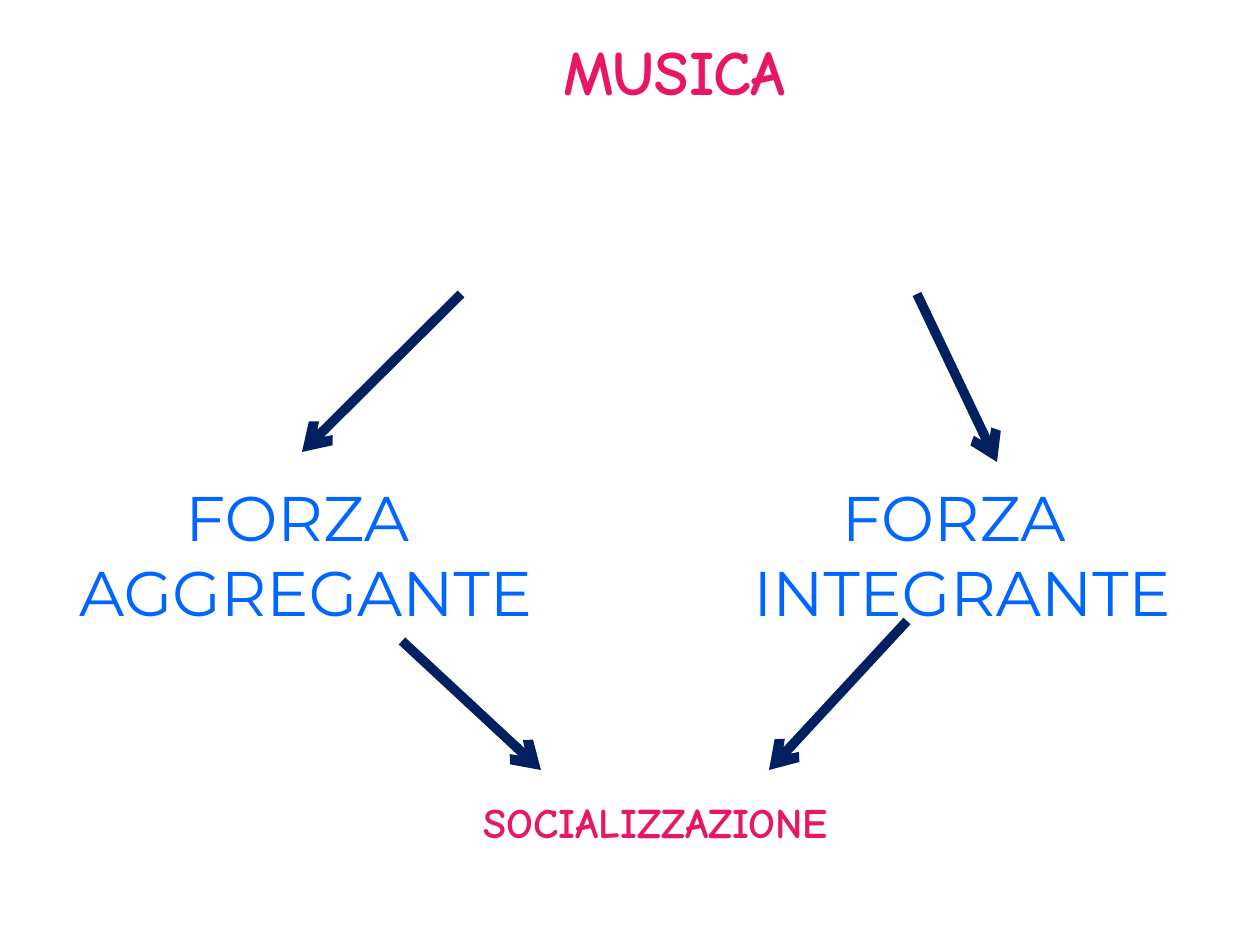
from dataclasses import dataclass

from lxml.etree import SubElement as Sub
from pptx import Presentation as Deck
from pptx.dml.color import RGBColor as Rgb
from pptx.enum.shapes import MSO_CONNECTOR as Conn
from pptx.enum.text import MSO_ANCHOR as Anchor, PP_ALIGN as Align
from pptx.oxml.ns import qn
from pptx.slide import Slide
from pptx.util import Emu, Pt

SCALE = 914400 / 126


def px(n: int) -> Emu:
    return Emu(round(n * SCALE))


@dataclass(frozen=True)
class Style:
    font: str
    size: int
    color: str
    bold: bool


@dataclass(frozen=True)
class Theme:
    title: Style = Style("Comic Neue", 36, "E81766", True)
    force: Style = Style("Montserrat", 36, "0066FF", False)
    end: Style = Style("Comic Neue", 24, "E81766", True)
    line: str = "002060"
    width: float = 5.5


@dataclass(frozen=True)
class Label:
    text: str
    left: int
    top: int
    width: int
    height: int
    style: Style


@dataclass(frozen=True)
class Arrow:
    x1: int
    y1: int
    x2: int
    y2: int


THEME = Theme()
LABELS = [
    Label("MUSICA", 134, 26, 1081, 238, THEME.title),
    Label("FORZA \nAGGREGANTE", 25, 472, 561, 129, THEME.force),
    Label("FORZA \nINTEGRANTE", 689, 472, 546, 139, THEME.force),
    Label("SOCIALIZZAZIONE", 115, 790, 1081, 110, THEME.end),
]
ARROWS = [
    Arrow(461, 294, 302, 452),
    Arrow(917, 294, 997, 462),
    Arrow(402, 641, 541, 770),
    Arrow(907, 621, 769, 770),
]


def write(slide: Slide, label: Label) -> None:
    box = slide.shapes.add_textbox(
        px(label.left), px(label.top), px(label.width), px(label.height)
    )
    frame = box.text_frame
    frame.word_wrap = False
    frame.vertical_anchor = Anchor.TOP
    frame.text = label.text
    style = label.style
    for para in frame.paragraphs:
        para.alignment = Align.CENTER
        for run in para.runs:
            font = run.font
            font.name = style.font
            font.size = Pt(style.size)
            font.bold = style.bold
            font.color.rgb = Rgb.from_string(style.color)


def draw(slide: Slide, arrow: Arrow) -> None:
    link = slide.shapes.add_connector(
        Conn.STRAIGHT, px(arrow.x1), px(arrow.y1), px(arrow.x2), px(arrow.y2)
    )
    link.line.color.rgb = Rgb.from_string(THEME.line)
    link.line.width = Pt(THEME.width)
    Sub(link.line._get_or_add_ln(), qn("a:tailEnd"), type="arrow")
    Sub(link._element.spPr, qn("a:effectLst"))


def main() -> None:
    deck = Deck()
    deck.slide_width, deck.slide_height = px(1260), px(945)
    slide = deck.slides.add_slide(deck.slide_layouts[6])
    for label in LABELS:
        write(slide, label)
    for arrow in ARROWS:
        draw(slide, arrow)
    deck.save("out.pptx")


if __name__ == "__main__":
    main()
